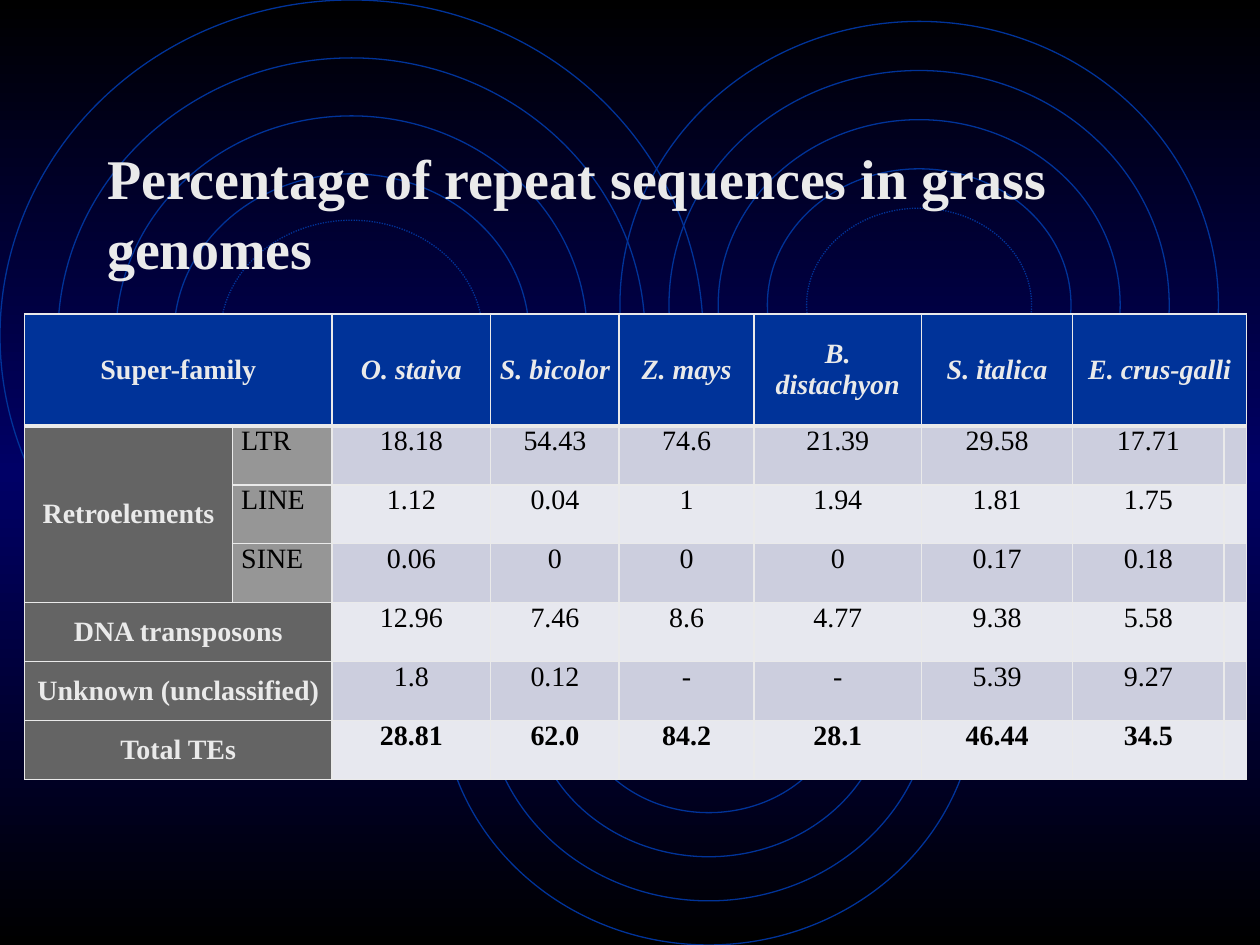
from copy import deepcopy
from dataclasses import dataclass

from lxml.etree import SubElement as Sub
from pptx import Presentation as Deck
from pptx.dml.color import RGBColor as Color
from pptx.enum.dml import MSO_LINE as Dash
from pptx.enum.shapes import MSO_SHAPE as Shape
from pptx.enum.text import MSO_ANCHOR as Anchor, MSO_AUTO_SIZE as Fit, PP_ALIGN as Align
from pptx.oxml.ns import qn
from pptx.util import Inches, Pt

COLS, ROWS = 100, 75


@dataclass(frozen=True)
class Theme:
    font: str = "Times New Roman"
    black: str = "000000"
    navy: str = "000066"
    blue: str = "003399"
    light: str = "EAEAEA"
    dark: str = "646464"
    grey: str = "969696"
    bands: tuple = ("CCCEDE", "E7E8EF")
    title: int = 32
    body: int = 16
    thin: float = 0.75
    rule: int = 1
    heavy: int = 3


def write(frame, text, size, color, font, bold=False, slant=False,
          align=Align.LEFT, anchor=Anchor.TOP, lead=1.0):
    frame.word_wrap = True
    frame.vertical_anchor = anchor
    para = frame.paragraphs[0]
    para.alignment = align
    para.line_spacing = lead
    run = para.add_run()
    run.text = text
    face = run.font
    face.name, face.size, face.bold, face.italic = font, Pt(size), bold, slant
    face.color.rgb = Color.from_string(color)


class Page:
    """Places elements on a grid of COLS by ROWS cells."""

    def __init__(self, deck, theme):
        self.theme = theme
        self.wide, self.high = deck.slide_width, deck.slide_height
        self.slide = deck.slides.add_slide(deck.slide_layouts[5])

    def across(self, cols):
        return round(self.wide * cols / COLS)

    def down(self, rows):
        return round(self.high * rows / ROWS)

    def place(self, x, y, w, h):
        return self.across(x), self.down(y), self.across(w), self.down(h)

    def ground(self, *shades):
        """Fill the background with evenly spaced shades, top to bottom."""
        fill = self.slide.background.fill
        fill.gradient()
        fill.gradient_angle = 90
        stops = self.slide.element.find(".//" + qn("a:gsLst"))
        while len(stops) < len(shades):
            stops.append(deepcopy(stops[0]))
        for i, (stop, shade) in enumerate(zip(fill.gradient_stops, shades)):
            stop.position = i / (len(shades) - 1)
            stop.color.rgb = Color.from_string(shade)

    def ring(self, x, y, w, h, dash=None):
        ring = self.slide.shapes.add_shape(Shape.OVAL, *self.place(x, y, w, h))
        ring.shadow.inherit = False
        ring.fill.background()
        ring.line.color.rgb = Color.from_string(self.theme.blue)
        ring.line.width = Pt(self.theme.thin)
        if dash:
            ring.line.dash_style = dash

    def ripple(self, x, y, w, h, step):
        """Draw nested rings, the inmost one dotted."""
        for turn in (0, 1, 2, 3, 3.8):
            d = turn * step
            dash = Dash.ROUND_DOT if turn == 3.8 else None
            self.ring(x + d, y + d, w - 2 * d, h - 2 * d, dash)

    def title(self, text, *spot):
        look, shape = self.theme, self.slide.shapes.title
        shape.left, shape.top, shape.width, shape.height = self.place(*spot)
        shape.text_frame.auto_size = Fit.NONE
        write(shape.text_frame, text, look.title, look.light, look.font,
              bold=True, lead=1.04)
        self.slide.shapes.element.append(shape.element)

    def edge(self, cell, row):
        look, props = self.theme, cell._tc.get_or_add_tcPr()
        for side in "LRTB":
            thick = (row, side) in ((0, "B"), (1, "T"))
            width = Pt(look.heavy if thick else look.rule)
            line = Sub(props, qn("a:ln" + side), w=str(width))
            Sub(Sub(line, qn("a:solidFill")), qn("a:srgbClr"), val=look.light)

    def style(self, row, col, last):
        """Give the fill and the text format of a table cell."""
        look = self.theme
        head = dict(color=look.light, bold=True, align=Align.CENTER, anchor=Anchor.MIDDLE)
        if row == 0:
            return look.blue, dict(head, slant=col > 0)
        if col == 0:
            return look.dark, head
        if col == 1:
            return look.grey, dict(color=look.black, align=Align.JUSTIFY)
        return look.bands[(row - 1) % 2], dict(
            color=look.black, bold=row == last, align=Align.CENTER)

    def table(self, data, x, y, cols, rows, spans):
        look = self.theme
        spot = self.place(x, y, sum(cols), sum(rows))
        grid = self.slide.shapes.add_table(len(rows), len(cols), *spot).table
        for col, w in zip(grid.columns, cols):
            col.width = self.across(w)
        for row, h in zip(grid.rows, rows):
            row.height = self.down(h)
        for r, line in enumerate(data):
            for c, text in enumerate(line):
                cell = grid.cell(r, c)
                fill, form = self.style(r, c, len(rows) - 1)
                self.edge(cell, r)
                cell.fill.solid()
                cell.fill.fore_color.rgb = Color.from_string(fill)
                cell.margin_left = cell.margin_right = Inches(0.07)
                cell.margin_top = cell.margin_bottom = 0
                if text:
                    write(cell.text_frame, text, look.body, font=look.font, **form)
                    cell.vertical_anchor = form.get("anchor", Anchor.TOP)
        for first, last in spans:
            grid.cell(*first).merge(grid.cell(*last))


RINGS = [
    (0, 0, 55.8, 53.3, 4.6),
    (35, 35, 42.5, 40, 3.5),
    (49.2, 1.7, 47.5, 45, 3.9),
]
DATA = [
    ["Super-family", "", "O. staiva", "S. bicolor", "Z. mays", "B. distachyon",
     "S. italica", "E. crus-galli", ""],
    ["Retroelements", "LTR", "18.18", "54.43", "74.6", "21.39", "29.58", "17.71", ""],
    ["", "LINE", "1.12", "0.04", "1", "1.94", "1.81", "1.75", ""],
    ["", "SINE", "0.06", "0", "0", "0", "0.17", "0.18", ""],
    ["DNA transposons", "", "12.96", "7.46", "8.6", "4.77", "9.38", "5.58", ""],
    ["Unknown (unclassified)", "", "1.8", "0.12", "-", "-", "5.39", "9.27", ""],
    ["Total TEs", "", "28.81", "62.0", "84.2", "28.1", "46.44", "34.5", ""],
]
WIDTHS = [16.5, 7.9, 12.6, 10.2, 10.7, 13.3, 12, 12, 1.5]
HEIGHTS = [8.9] + [4.68] * 6
SPANS = [((0, 7), (0, 8)), ((1, 0), (3, 0))]
SPANS += [((r, 0), (r, 1)) for r in (0, 4, 5, 6)]


def main():
    deck = Deck()
    deck.slide_width, deck.slide_height = Inches(10), Inches(7.5)
    look = Theme()
    page = Page(deck, look)
    page.ground(look.black, look.navy, look.black)
    for ring in RINGS:
        page.ripple(*ring)
    page.table(DATA, 1.95, 24.9, WIDTHS, HEIGHTS, SPANS)
    page.title("Percentage of repeat sequences in grass genomes", 7.5, 10.7, 81.9, 11.8)
    deck.save("out.pptx")


if __name__ == "__main__":
    main()
